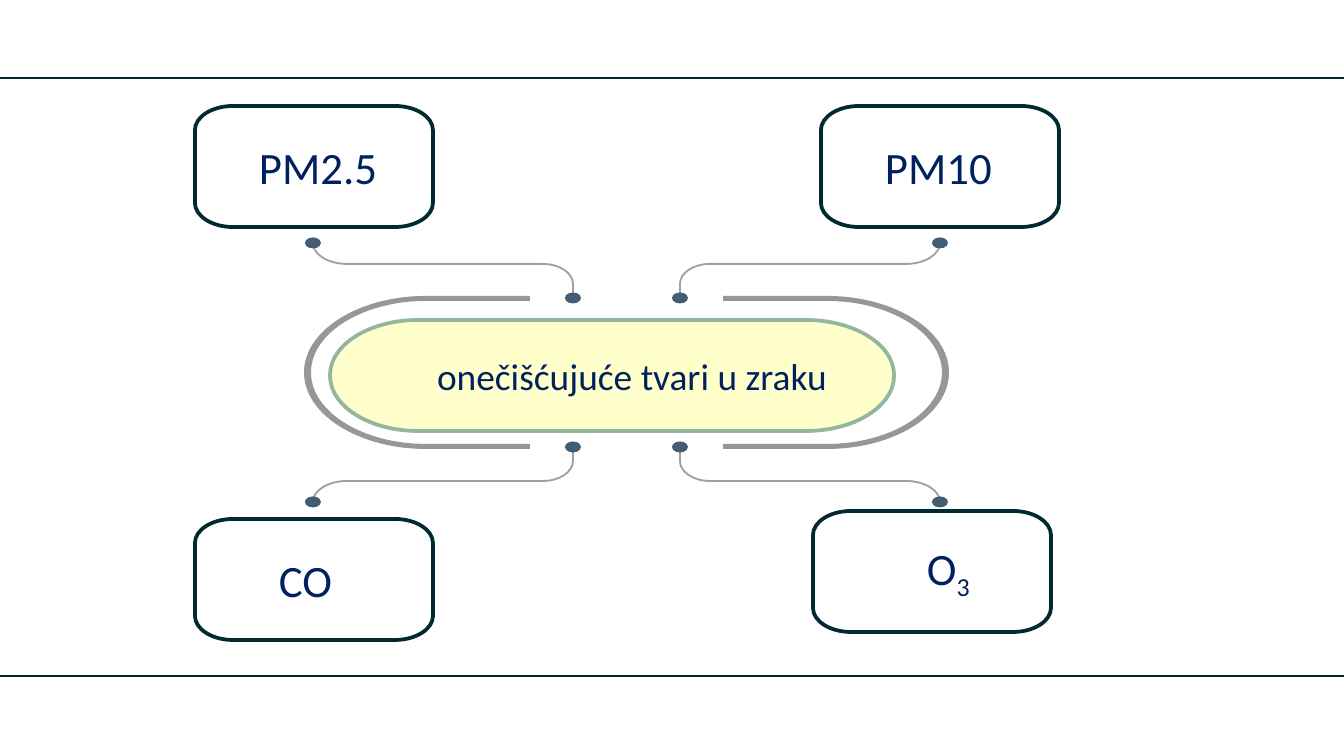
from typing import NamedTuple

from pptx import Presentation, util as u
from pptx.dml.color import RGBColor
from pptx.enum import shapes, text as t
from pptx.oxml.ns import qn
from lxml import etree

PX = 914400 / 134.4
WIDTH, HEIGHT = 1344, 756
MIRROR_X, MIRROR_Y = 1253, 745  # sums of mirrored coordinates
ROUND = 0.55  # Bezier handle length for a quarter ellipse
COLORS = {
    "frame": "002930", "text": "002060", "white": "FFFFFF",
    "pill": "FFFFCC", "pill_line": "93B69C",
    "bracket": "96979B", "wire": "9FA0A4", "dot": "435D74",
}
Point = tuple[float, float]
Step = list[Point]  # one point for a straight line, three for a curve


class Box(NamedTuple):
    label: str
    left: int
    top: int
    text_inset: int
    subscript: str = ""
    width: int = 238
    height: int = 121
    radius_x: int = 38
    radius_y: int = 24
    size: int = 24
    fill: str = "white"
    line: str = "frame"


BOXES = [
    Box("onečišćujuće tvari u zraku", 330, 320, 107, width=564, height=111,
        radius_x=88, radius_y=55, size=20, fill="pill", line="pill_line"),
    Box("PM2.5", 195, 106, 64),
    Box("PM10", 821, 106, 64),
    Box("CO", 195, 519, 84),
    Box("O", 813, 511, 114, subscript="3"),
]


def px(length: float) -> u.Emu:
    return u.Emu(round(length * PX))


def rgb(name: str) -> RGBColor:
    return RGBColor.from_string(COLORS[name])


def curve(start: Point, corner: Point, end: Point) -> Step:
    """Quarter ellipse from start to end, bending towards the corner."""
    handles = [(x + (corner[0] - x) * ROUND, y + (corner[1] - y) * ROUND)
               for x, y in (start, end)]
    return [*handles, end]


def mirror(steps: list[Step], flip_x: bool, flip_y: bool) -> list[Step]:
    return [[(MIRROR_X - x if flip_x else x, MIRROR_Y - y if flip_y else y)
             for x, y in step] for step in steps]


def style(shape, fill: str = "", line: str = "", weight: float = 1) -> None:
    shape.shadow.inherit = False
    if fill:
        shape.fill.solid()
        shape.fill.fore_color.rgb = rgb(fill)
    else:
        shape.fill.background()
    if line:
        shape.line.color.rgb = rgb(line)
        shape.line.width = u.Pt(weight)
    else:
        shape.line.fill.background()


def draw_outline(slide, steps: list[Step], closed: bool = True, **look):
    """Build the outline from its points, then bend the three-point steps."""
    (start,), *rest = [[(px(x), px(y)) for x, y in step] for step in steps]
    builder = slide.shapes.build_freeform(*start)
    builder.add_line_segments([point for step in rest for point in step], close=closed)
    shape = builder.convert_to_shape()
    segments = iter(list(shape._element.iter(qn("a:lnTo"))))
    for step in rest:
        first, *others = [next(segments) for _ in step]
        if others:
            bend = etree.Element(qn("a:cubicBezTo"))
            first.addprevious(bend)
            for segment in (first, *others):
                bend.append(segment[0])
                segment.getparent().remove(segment)
    style(shape, **look)
    return shape


def write_text(shape, text: str, *, size: int, color: str, inset: int,
               subscript: str = "", font: str = "Calibri") -> None:
    frame = shape.text_frame
    frame.word_wrap = True
    frame.vertical_anchor = t.MSO_ANCHOR.MIDDLE
    frame.margin_left = px(inset)
    frame.margin_top = frame.margin_right = frame.margin_bottom = u.Inches(0.1)
    paragraph = frame.paragraphs[0]
    paragraph.alignment = t.PP_ALIGN.LEFT
    for content, baseline in ((text, 0), (subscript, -25000)):
        if not content:
            continue
        run = paragraph.add_run()
        run.text = content
        run.font.name = font
        run.font.size = u.Pt(size)
        run.font.color.rgb = rgb(color)
        if baseline:
            run._r.get_or_add_rPr().set("baseline", str(baseline))


def draw_box(slide, box: Box) -> None:
    left, top = box.left, box.top
    right, bottom = left + box.width, top + box.height
    near_x, far_x = left + box.radius_x, right - box.radius_x
    near_y, far_y = top + box.radius_y, bottom - box.radius_y
    shape = draw_outline(slide, [
        [(near_x, top)],
        curve((near_x, top), (left, top), (left, near_y)), [(left, far_y)],
        curve((left, far_y), (left, bottom), (near_x, bottom)), [(far_x, bottom)],
        curve((far_x, bottom), (right, bottom), (right, far_y)), [(right, near_y)],
        curve((right, near_y), (right, top), (far_x, top)),
    ], fill=box.fill, line=box.line, weight=2)
    write_text(shape, box.label, size=box.size, color="text",
               inset=box.text_inset, subscript=box.subscript)


def draw_dot(slide, center: Point) -> None:
    width, height = 16, 11
    dot = slide.shapes.add_shape(
        shapes.MSO_SHAPE.OVAL, px(center[0] - width / 2), px(center[1] - height / 2),
        px(width), px(height))
    style(dot, fill="dot")


def draw_rule(slide, left: int, right: int, y: int) -> None:
    rule = slide.shapes.add_connector(
        shapes.MSO_CONNECTOR.STRAIGHT, px(left), px(y), px(right), px(y))
    rule.line.color.rgb = rgb("frame")
    rule.line.width = u.Pt(0.75)
    etree.SubElement(rule._element.spPr, qn("a:effectLst"))


def main() -> None:
    presentation = Presentation()
    presentation.slide_width, presentation.slide_height = px(WIDTH), px(HEIGHT)
    slide = presentation.slides.add_slide(presentation.slide_layouts[6])

    # Rules at top and bottom
    draw_rule(slide, 0, 1345, 78)
    draw_rule(slide, -2, 1344, 676)

    # Centre pill and pollutant boxes
    for box in BOXES:
        draw_box(slide, box)

    # Brackets around the pill
    tip, bend, middle = 530, 426, MIRROR_Y / 2
    bracket = [
        [(tip, 296)], [(bend, 296)],
        curve((bend, 296), (304, 296), (304, middle)),
        curve((304, middle), (304, 449), (bend, 449)),
        [(tip, 449)], [(tip, 444)], [(bend, 444)],
        curve((bend, 444), (311, 444), (311, middle)),
        curve((311, middle), (311, 301), (bend, 301)), [(tip, 301)],
    ]
    for flip_x in (False, True):
        draw_outline(slide, mirror(bracket, flip_x, False), fill="bracket")

    # Wires with a dot at each end, mirrored into four quarters
    wire = [
        [(313, 243)], curve((313, 243), (313, 264), (347, 264)), [(543, 264)],
        curve((543, 264), (573, 264), (573, 284)), [(573, 298)],
    ]
    for flip_x in (False, True):
        for flip_y in (False, True):
            steps = mirror(wire, flip_x, flip_y)
            draw_outline(slide, steps, closed=False, line="wire")
            for end in (steps[0][-1], steps[-1][-1]):
                draw_dot(slide, end)

    presentation.save("out.pptx")


if __name__ == "__main__":
    main()
